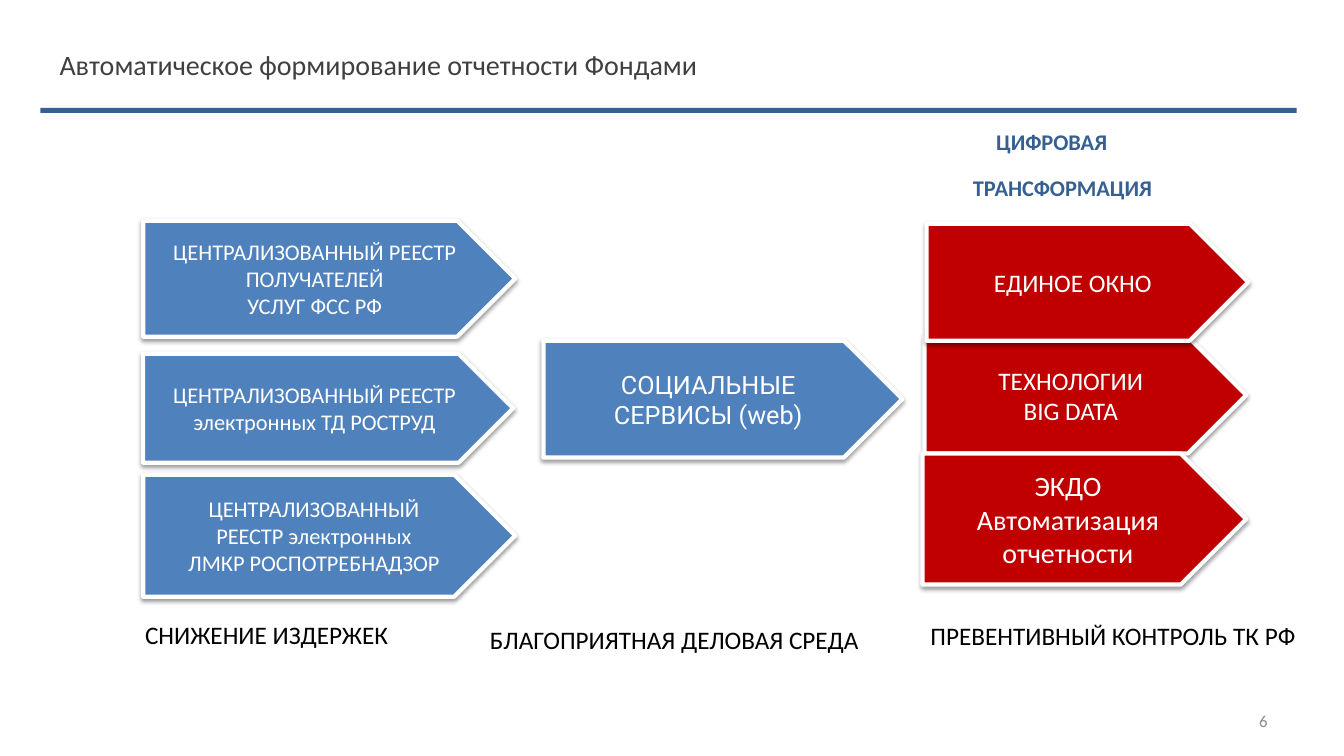
from dataclasses import dataclass

from pptx import Presentation
from pptx.dml.color import RGBColor
from pptx.enum.shapes import MSO_SHAPE
from pptx.enum.text import MSO_ANCHOR, PP_ALIGN
from pptx.oxml import parse_xml
from pptx.oxml.ns import nsdecls, qn
from pptx.util import Inches, Pt


@dataclass(frozen=True)
class Theme:
    font: str = "Calibri"
    web_font: str = "Roboto"
    navy: RGBColor = RGBColor(0x37, 0x60, 0x92)
    blue: RGBColor = RGBColor(0x4F, 0x81, 0xBD)
    red: RGBColor = RGBColor(0xC0, 0x00, 0x00)
    white: RGBColor = RGBColor(0xFF, 0xFF, 0xFF)
    black: RGBColor = RGBColor(0x00, 0x00, 0x00)
    title_gray: RGBColor = RGBColor(0x40, 0x40, 0x40)
    number_gray: RGBColor = RGBColor(0x8C, 0x8C, 0x8C)
    large: int = 20
    medium: int = 18
    body: int = 16
    small: int = 12


theme = Theme()


def write(tf, text, size, color, align=PP_ALIGN.LEFT, font=theme.font, bold=False):
    tf.word_wrap = True
    tf.text = text
    for p in tf.paragraphs:
        p.alignment = align
        for r in p.runs:
            r.font.name = font
            r.font.size = Pt(size)
            r.font.bold = bold
            r.font.color.rgb = color


def add_soft_shadow(sp):
    sp.shadow.inherit = False
    effects = sp._element.spPr.find(qn("a:effectLst"))
    effects.append(parse_xml(
        f'<a:outerShdw {nsdecls("a")} blurRad="40000" dist="20000" dir="5400000" rotWithShape="0">'
        '<a:srgbClr val="000000"><a:alpha val="38000"/></a:srgbClr></a:outerShdw>'))


prs = Presentation()
prs.slide_width = Inches(13.33)
prs.slide_height = Inches(7.5)
s = prs.slides.add_slide(prs.slide_layouts[5])

# Header
rule = s.shapes.add_shape(MSO_SHAPE.RECTANGLE, Inches(0.4), Inches(1.07), Inches(12.46), Inches(0.05))
rule.shadow.inherit = False
rule.fill.solid()
rule.fill.fore_color.rgb = theme.navy
rule.line.fill.background()

title = s.shapes.title
title.left, title.top = Inches(0.37), Inches(0.29)
title.width, title.height = Inches(12.46), Inches(0.69)
title.text_frame.margin_left = Inches(0.22)
title.text_frame.vertical_anchor = MSO_ANCHOR.MIDDLE
write(title.text_frame, "Автоматическое формирование отчетности Фондами", theme.large, theme.title_gray)

# Arrows, back to front: left, top, width, height, fill, size, font, text
arrows = [
    (1.42, 2.19, 3.69, 1.15, theme.blue, theme.body, theme.font,
     "ЦЕНТРАЛИЗОВАННЫЙ РЕЕСТР ПОЛУЧАТЕЛЕЙ\nУСЛУГ ФСС РФ"),
    (1.42, 3.51, 3.67, 1.08, theme.blue, theme.body, theme.font,
     "ЦЕНТРАЛИЗОВАННЫЙ РЕЕСТР электронных ТД РОСТРУД"),
    (1.42, 4.71, 3.69, 1.21, theme.blue, theme.body, theme.font,
     "ЦЕНТРАЛИЗОВАННЫЙ\nРЕЕСТР электронных\nЛМКР РОСПОТРЕБНАДЗОР"),
    (5.39, 3.38, 3.56, 1.16, theme.blue, theme.medium, theme.web_font,
     "СОЦИАЛЬНЫЕ\nСЕРВИСЫ (web)"),
    (9.17, 3.34, 3.19, 1.16, theme.red, theme.medium, theme.font, "ТЕХНОЛОГИИ\nBIG DATA"),
    (9.19, 2.22, 3.19, 1.16, theme.red, theme.medium, theme.font, "ЕДИНОЕ ОКНО"),
    (9.15, 4.5, 3.21, 1.3, theme.red, theme.large, theme.font, "ЭКДО\nАвтоматизация отчетности"),
]
for left, top, width, height, fill, size, font, text in arrows:
    sp = s.shapes.add_shape(MSO_SHAPE.PENTAGON, Inches(left), Inches(top), Inches(width), Inches(height))
    sp.fill.solid()
    sp.fill.fore_color.rgb = fill
    sp.line.color.rgb = theme.white
    sp.line.width = Pt(3)
    add_soft_shadow(sp)
    write(sp.text_frame, text, size, theme.white, PP_ALIGN.CENTER, font)

# Captions under the columns
captions = [
    (1.34, 6.09, 3.46, "СНИЖЕНИЕ ИЗДЕРЖЕК"),
    (4.76, 6.14, 4.05, "БЛАГОПРИЯТНАЯ ДЕЛОВАЯ СРЕДА"),
    (9.13, 6.11, 4.08, "ПРЕВЕНТИВНЫЙ КОНТРОЛЬ ТК РФ"),
]
for left, top, width, text in captions:
    caption = s.shapes.add_textbox(Inches(left), Inches(top), Inches(width), Inches(0.4))
    write(caption.text_frame, text, theme.medium, theme.black)

# Heading over the red column
heading = s.shapes.add_textbox(Inches(9.56), Inches(1.22), Inches(3.7), Inches(0.86))
tf = heading.text_frame
tf.margin_left = tf.margin_top = tf.margin_right = tf.margin_bottom = 0
write(tf, "ЦИФРОВАЯ\nТРАНСФОРМАЦИЯ", theme.body, theme.navy, bold=True)
for p, indent in zip(tf.paragraphs, (0.32, 0.09)):
    p.line_spacing = 1.2
    p._p.get_or_add_pPr().set("marL", str(Inches(indent)))
tf.paragraphs[1].space_before = Pt(10)

# Slide number
number = s.shapes.add_textbox(Inches(9.56), Inches(6.95), Inches(3.11), Inches(0.4))
number.text_frame.vertical_anchor = MSO_ANCHOR.MIDDLE
write(number.text_frame, "6", theme.small, theme.number_gray, PP_ALIGN.RIGHT)

prs.save("out.pptx")
